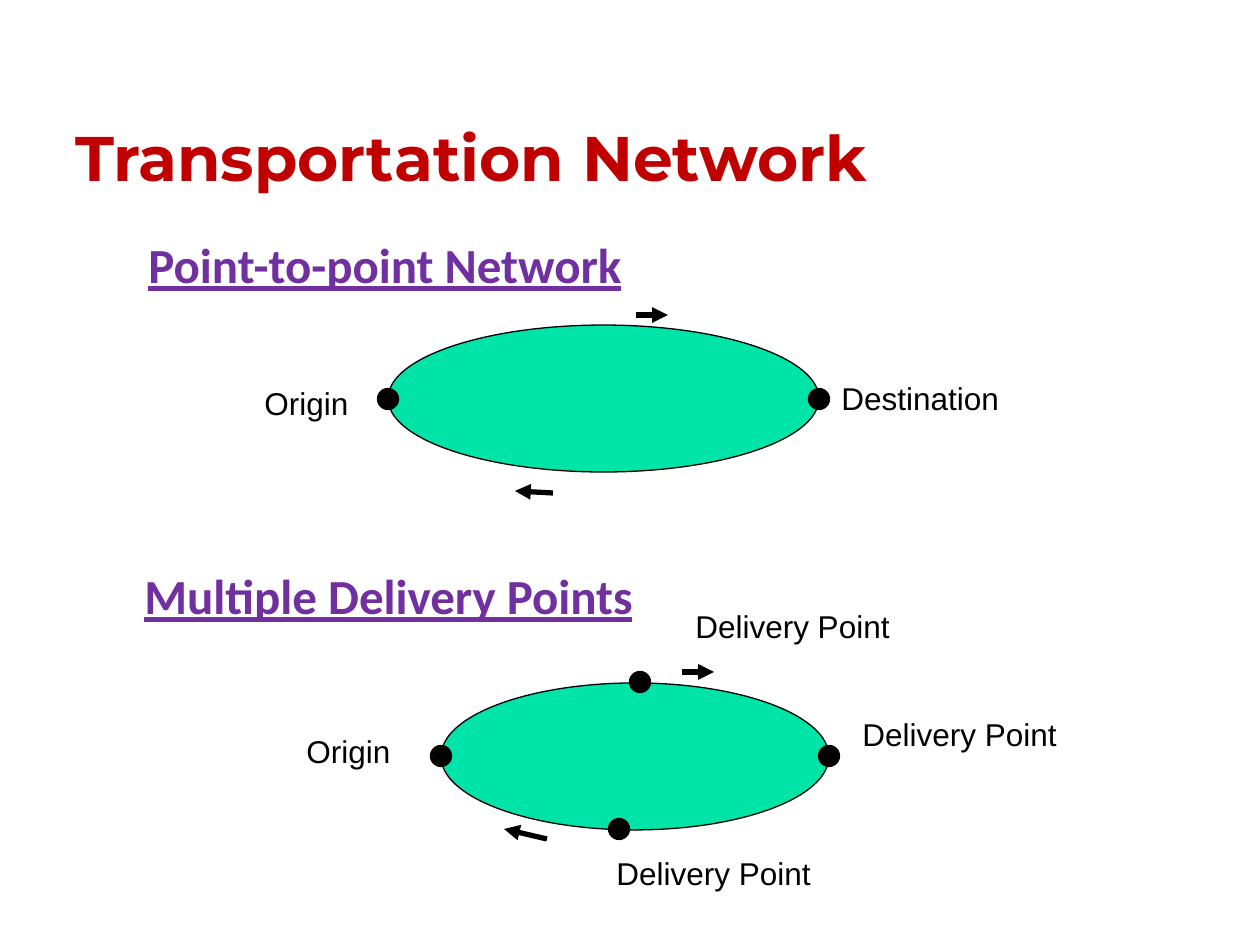
from pptx import Presentation
from pptx.dml.color import RGBColor
from pptx.enum.shapes import MSO_CONNECTOR, MSO_SHAPE
from pptx.enum.text import MSO_ANCHOR
from pptx.oxml.ns import qn
from pptx.util import Emu, Pt
from lxml import etree

RED = RGBColor(0xC0, 0x00, 0x00)
PURPLE = RGBColor(0x70, 0x30, 0xA0)
GREEN = RGBColor(0x00, 0xE4, 0xA8)
BLACK = RGBColor(0x00, 0x00, 0x00)

PX_PER_INCH = 126
DOT = 21

TITLE_FONT = {"name": "Montserrat", "size": Pt(36), "bold": True}
HEADING_FONT = {"name": "Calibri", "size": Pt(28), "bold": True, "underline": True}
LABEL_FONT = {"name": "Arial", "size": Pt(18)}

TITLE = ("Transportation Network", (63, 115, 1074, 88))

# Boxes are left, top, width, height; stops are dot centres; arrows run tail to head.
NETWORKS = [
    {
        "heading": ("Point-to-point Network", (136, 231, 1029, 70)),
        "loop": (388, 325, 431, 147),
        "stops": [(388, 399), (819, 399)],
        "labels": [
            ("Origin", (252, 378, 136, 50)),
            ("Destination", (829, 373, 242, 50)),
        ],
        "arrows": [((636, 315), (668, 315)), ((553, 493), (515, 491))],
    },
    {
        "heading": ("Multiple Delivery Points", (132, 562, 1002, 70)),
        "loop": (441, 683, 388, 147),
        "stops": [(441, 756), (829, 756), (640, 682), (619, 829)],
        "labels": [
            ("Origin", (294, 726, 136, 50)),
            ("Delivery Point", (850, 709, 242, 50)),
            ("Delivery Point", (683, 601, 242, 50)),
            ("Delivery Point", (604, 848, 282, 50)),
        ],
        "arrows": [((682, 672), (714, 672)), ((547, 839), (504, 829))],
    },
]


def px(*lengths):
    return [Emu(round(length * 914400 / PX_PER_INCH)) for length in lengths]


def add_text(slide, text, box, font, color, anchor=MSO_ANCHOR.TOP, spacing=None):
    frame = slide.shapes.add_textbox(*px(*box)).text_frame
    frame.word_wrap = True
    frame.vertical_anchor = anchor
    paragraph = frame.paragraphs[0]
    paragraph.line_spacing = spacing
    run = paragraph.add_run()
    run.text = text
    run.font.color.rgb = color
    for attribute, value in font.items():
        setattr(run.font, attribute, value)


def add_ellipse(slide, box, color):
    ellipse = slide.shapes.add_shape(MSO_SHAPE.OVAL, *px(*box))
    ellipse.shadow.inherit = False
    ellipse.fill.solid()
    ellipse.fill.fore_color.rgb = color
    ellipse.line.color.rgb = BLACK
    ellipse.line.width = Pt(0.75)


def add_arrow(slide, tail, head):
    arrow = slide.shapes.add_connector(MSO_CONNECTOR.STRAIGHT, *px(*tail, *head))
    arrow.line.color.rgb = BLACK
    arrow.line.width = Pt(3)
    etree.SubElement(arrow.line._get_or_add_ln(), qn("a:tailEnd"), type="triangle")
    etree.SubElement(arrow._element.spPr, qn("a:effectLst"))


def add_network(slide, network):
    add_text(slide, *network["heading"], HEADING_FONT, PURPLE, spacing=0.99)
    add_ellipse(slide, network["loop"], GREEN)
    for x, y in network["stops"]:
        add_ellipse(slide, (x - DOT / 2, y - DOT / 2, DOT, DOT), BLACK)
    for tail, head in network["arrows"]:
        add_arrow(slide, tail, head)
    for text, box in network["labels"]:
        add_text(slide, text, box, LABEL_FONT, BLACK)


def main():
    presentation = Presentation()
    presentation.slide_width, presentation.slide_height = px(1260, 945)
    slide = presentation.slides.add_slide(presentation.slide_layouts[6])
    add_text(slide, *TITLE, TITLE_FONT, RED, MSO_ANCHOR.BOTTOM, 0.99)
    for network in NETWORKS:
        add_network(slide, network)
    presentation.save("out.pptx")


if __name__ == "__main__":
    main()
